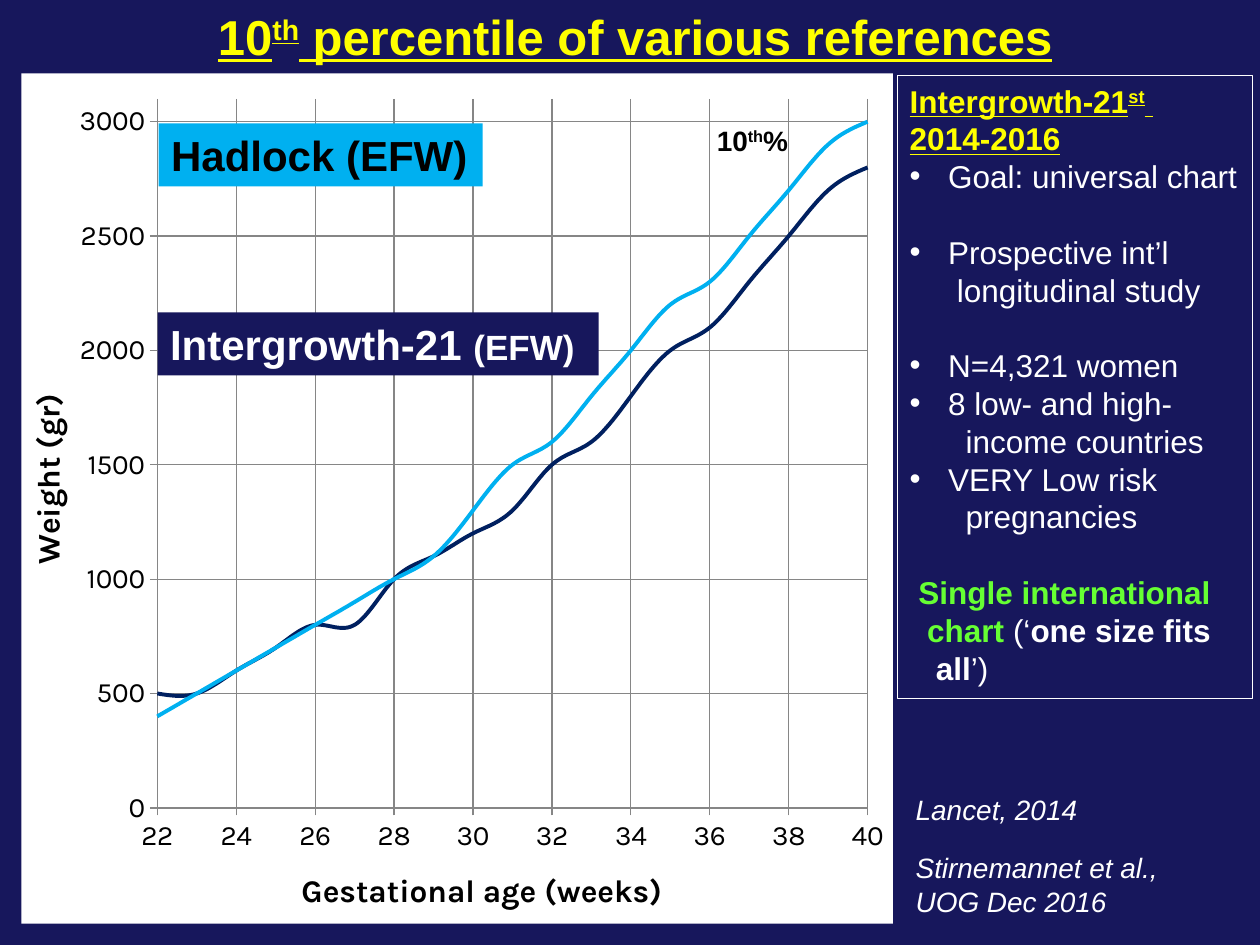
from dataclasses import dataclass

from lxml import etree
from pptx import Presentation
from pptx.chart.data import XyChartData
from pptx.dml.color import RGBColor
from pptx.enum.chart import XL_CHART_TYPE as ChartType, XL_TICK_MARK as TickMark
from pptx.enum.shapes import MSO_SHAPE as Preset
from pptx.enum.text import MSO_ANCHOR as Anchor, PP_ALIGN as Align
from pptx.oxml.ns import qn
from pptx.util import Cm, Pt


@dataclass(frozen=True)
class Theme:
    navy: RGBColor = RGBColor(0x17, 0x17, 0x5C)
    curve_navy: RGBColor = RGBColor(0x00, 0x20, 0x60)
    sky: RGBColor = RGBColor(0x00, 0xB0, 0xF0)
    yellow: RGBColor = RGBColor(0xFF, 0xFF, 0x00)
    green: RGBColor = RGBColor(0x66, 0xFF, 0x33)
    white: RGBColor = RGBColor(0xFF, 0xFF, 0xFF)
    black: RGBColor = RGBColor(0, 0, 0)
    grid: RGBColor = RGBColor(0x86, 0x86, 0x86)
    font: str = "Arial"
    chart_font: str = "Karla"
    title: int = 28
    label: int = 24
    label_small: int = 20
    body: int = 18
    note: int = 16


theme = Theme()


def write_text(shape, paragraphs, align=Align.LEFT):
    """Each paragraph is (bulleted, runs); each run is (text, format, raised)."""
    frame = shape.text_frame
    frame.word_wrap = True
    frame.vertical_anchor = Anchor.TOP
    for index, (bulleted, runs) in enumerate(paragraphs):
        paragraph = frame.paragraphs[0] if index == 0 else frame.add_paragraph()
        paragraph.alignment = align
        if bulleted:
            properties = paragraph._p.get_or_add_pPr()
            properties.set("marL", str(Cm(0.6)))
            properties.set("indent", str(-Cm(0.6)))
            etree.SubElement(properties, qn("a:buFont"), typeface=theme.font)
            etree.SubElement(properties, qn("a:buChar"), char="•")
        for text, values, raised in runs:
            for number, line in enumerate(text.split("\n")):
                if number:
                    paragraph.add_line_break()
                    line_break = paragraph._p.findall(qn("a:br"))[-1]
                    etree.SubElement(line_break, qn("a:rPr"), sz=str(values["size"].centipoints))
                if not line:
                    continue
                run = paragraph.add_run()
                run.text = line
                run.font.name = theme.font
                for name, value in values.items():
                    if name == "color":
                        run.font.color.rgb = value
                    else:
                        setattr(run.font, name, value)
                if raised:
                    run._r.get_or_add_rPr().set("baseline", "30000")


def place_in_chart(element, position, **fractions):
    """Give a chart part a fixed place, as fractions of the chart area."""
    for old in element.findall(qn("c:layout")):
        element.remove(old)
    layout = etree.Element(qn("c:layout"))
    manual = etree.SubElement(layout, qn("c:manualLayout"))
    if "w" in fractions:
        etree.SubElement(manual, qn("c:layoutTarget"), val="inner")
    for mode in ("xMode", "yMode"):
        etree.SubElement(manual, qn(f"c:{mode}"), val="edge")
    for name, value in fractions.items():
        etree.SubElement(manual, qn(f"c:{name}"), val=str(value))
    element.insert(position, layout)


presentation = Presentation()
presentation.slide_width, presentation.slide_height = Cm(25.4), Cm(19.05)
slide = presentation.slides.add_slide(presentation.slide_layouts[6])
slide.background.fill.solid()
slide.background.fill.fore_color.rgb = theme.navy

# Title
heading = dict(size=Pt(theme.title), color=theme.yellow, bold=True, underline=True)
title = slide.shapes.add_textbox(Cm(0.64), Cm(0), Cm(24.33), Cm(1.45))
write_text(title, [(False, [("10", heading, False), ("th", heading, True),
                            (" percentile of various references", heading, False)])], Align.CENTER)

# Growth curves
weeks = range(22, 41)
curves = [
    ("Hadlock", theme.sky, [400, 500, 600, 700, 800, 900, 1000, 1100, 1300, 1500,
                            1600, 1800, 2000, 2200, 2300, 2500, 2700, 2900, 3000]),
    ("Intergrowth-21", theme.curve_navy, [500, 500, 600, 700, 800, 800, 1000, 1100, 1200, 1300,
                                          1500, 1600, 1800, 2000, 2100, 2300, 2500, 2700, 2800]),
]
chart_data = XyChartData()
for name, _, weights in curves:
    series = chart_data.add_series(name)
    for week, weight in zip(weeks, weights):
        series.add_data_point(week, weight)
chart = slide.shapes.add_chart(ChartType.XY_SCATTER_SMOOTH_NO_MARKERS, Cm(0.43), Cm(1.48),
                               Cm(17.57), Cm(17.14), chart_data).chart
chart.has_legend = False
chart.has_title = False
chart.font.name = theme.chart_font
chart.font.size = Pt(theme.note)
chart.font.color.rgb = theme.black
for series, (_, color, _) in zip(chart.plots[0].series, curves):
    series._element.find(qn("c:smooth")).set("val", "1")
    series.format.line.color.rgb = color
    series.format.line.width = Pt(2.25)

# White chart area
area = etree.Element(qn("c:spPr"))
area_fill = etree.SubElement(area, qn("a:solidFill"))
etree.SubElement(area_fill, qn("a:srgbClr"), val=str(theme.white))
etree.SubElement(etree.SubElement(area, qn("a:ln")), qn("a:noFill"))
chart._chartSpace.chart.addnext(area)
place_in_chart(chart._chartSpace.chart.plotArea, 0, x=0.156, y=0.03, w=0.815, h=0.834)

# Axes
axes = [
    (chart.category_axis, "Gestational age (weeks)", (0.315, 0.93),
     dict(minimum_scale=22, maximum_scale=40, major_unit=2)),
    (chart.value_axis, "Weight (gr)", (0, 0.37),
     dict(minimum_scale=0, maximum_scale=3100, major_unit=500)),
]
for axis, caption, (left, top), values in axes:
    values |= dict(has_major_gridlines=True, major_tick_mark=TickMark.CROSS)
    for name, value in values.items():
        setattr(axis, name, value)
    for line in (axis.format.line, axis.major_gridlines.format.line):
        line.color.rgb = theme.grid
        line.width = Pt(0.75)
    axis.tick_labels.font.size = Pt(theme.note)
    axis_title = axis.axis_title
    axis_title.text_frame.text = caption
    font = axis_title.text_frame.paragraphs[0].runs[0].font
    for name, value in dict(name=theme.chart_font, size=Pt(theme.body), bold=True).items():
        setattr(font, name, value)
    font.color.rgb = theme.black
    place_in_chart(axis_title._element, 1, x=left, y=top)

# Curve labels and the study panel
label = dict(size=Pt(theme.label), color=theme.white, bold=True)
study_heading = heading | dict(size=Pt(theme.body))
plain = dict(size=Pt(theme.body), color=theme.white)
strong = plain | dict(bold=True)
verdict = strong | dict(color=theme.green)
points = [
    " Goal: universal chart\n",
    " Prospective int’l\n  longitudinal study\n",
    " N=4,321 women",
    " 8 low- and high-\n   income countries",
    " VERY Low risk \n   pregnancies",
]
study = [
    (False, [("Intergrowth-21", study_heading, False), ("st", study_heading, True),
             (" \n2014-2016", study_heading, False)]),
    *[(True, [(point, plain, False)]) for point in points],
    (False, [("\n ", plain, False), ("Single international", verdict, False)]),
    (False, [("  chart ", verdict, False), ("(‘", plain, False),
             ("one size fits \n   all", strong, False), ("’)", plain, False)]),
]
boxes = [
    ((3.18, 6.3, 8.89, 1.27), theme.navy, None,
     [(False, [("Intergrowth-21 ", label, False),
               ("(EFW)", label | dict(size=Pt(theme.label_small)), False)])]),
    ((3.2, 2.49, 6.53, 1.27), theme.sky, None,
     [(False, [("Hadlock (EFW)", label | dict(color=theme.black), False)])]),
    ((18.09, 1.52, 7.16, 12.57), None, theme.white, study),
]
for bounds, fill, outline, paragraphs in boxes:
    box = slide.shapes.add_shape(Preset.RECTANGLE, *map(Cm, bounds))
    box.shadow.inherit = False
    if fill is None:
        box.fill.background()
    else:
        box.fill.solid()
        box.fill.fore_color.rgb = fill
    if outline is None:
        box.line.fill.background()
    else:
        box.line.color.rgb = outline
        box.line.width = Pt(0.75)
    write_text(box, paragraphs)

# Percentile mark and citations
mark = dict(size=Pt(theme.note), color=theme.black, bold=True)
citation = dict(size=Pt(theme.note), color=theme.white, italic=True)
notes = [
    ((14.2, 2.36, 2.54, 0.94), [("10", mark, False), ("th", mark, True), ("%", mark, False)]),
    ((18.21, 17.02, 7.19, 1.63), [("Stirnemannet et al., \nUOG Dec 2016", citation, False)]),
    ((18.21, 15.85, 7.19, 0.94), [("Lancet, 2014", citation, False)]),
]
for bounds, runs in notes:
    write_text(slide.shapes.add_textbox(*map(Cm, bounds)), [(False, runs)])

presentation.save("out.pptx")
